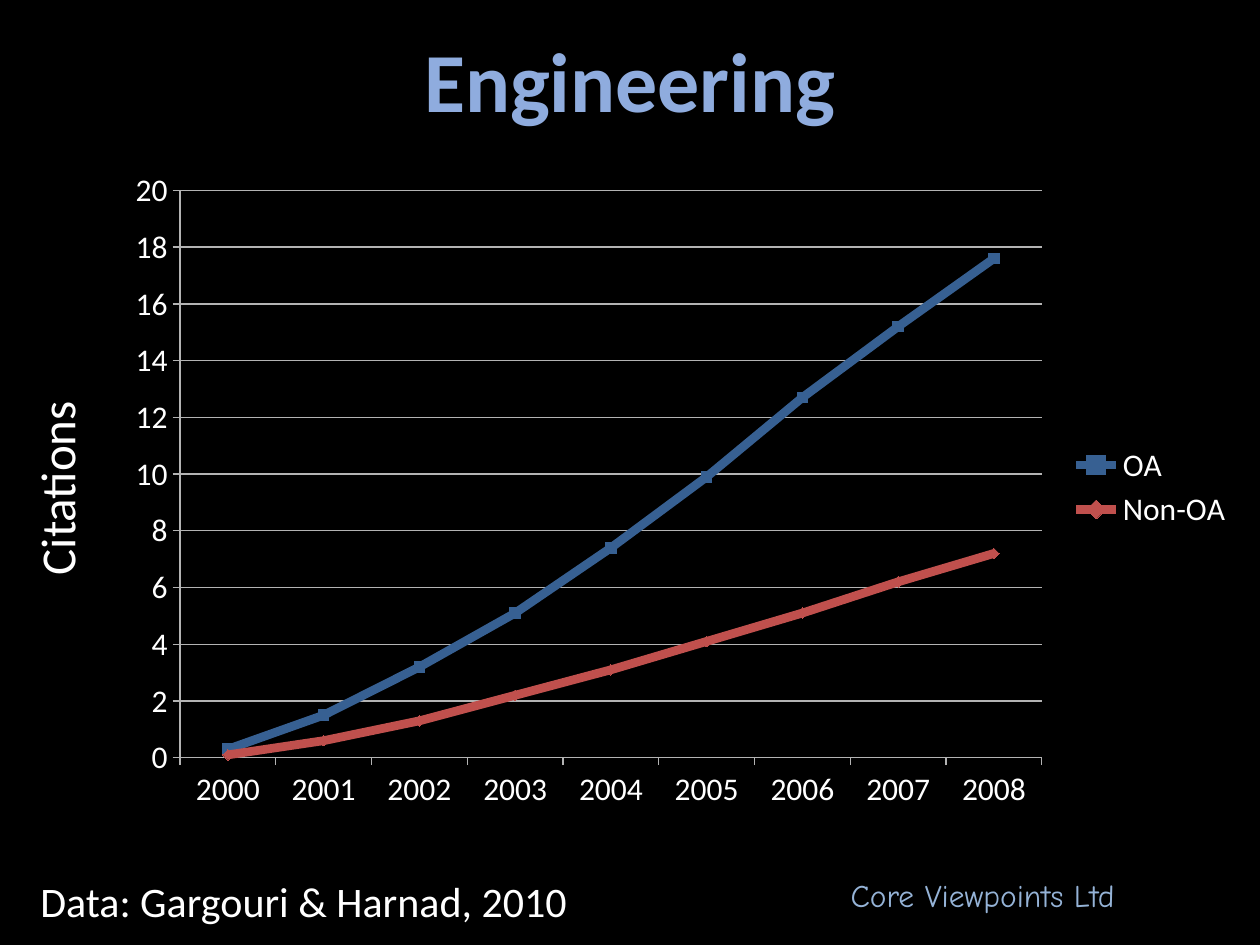
from lxml import etree
from pptx import Presentation
from pptx import util as u
from pptx.chart import data as chart_data
from pptx.dml.color import RGBColor
from pptx.enum import chart as ch, text as tx
from pptx.oxml import ns

# Content
YEARS = [str(year) for year in range(2000, 2009)]
SERIES = [
    ("OA", [0.3, 1.5, 3.2, 5.1, 7.4, 9.9, 12.7, 15.2, 17.6], "oa", "SQUARE"),
    ("Non-OA", [0.1, 0.6, 1.3, 2.2, 3.1, 4.1, 5.1, 6.2, 7.2], "non_oa", "DIAMOND"),
]
# words, place (left, top, width, height), style, alignment, anchor, vert
LABELS = [
    ("Engineering", (36, 0, 648, 90), "title", "CENTER", "MIDDLE", None),
    ("Data: Gargouri & Harnad, 2010", (16, 497, 344, 36), "source", "LEFT", "TOP", None),
    ("Core Viewpoints Ltd", (479, 497, 221, 29), "credit", "LEFT", "TOP", None),
    ("Citations", (11.5, 166.5, 48, 225), "axis", "CENTER", "TOP", "vert270"),
]
CHART_PLACE = (64, 90, 648, 377)
PLOT_LAYOUT = {"x": 0.06, "y": 0.05, "w": 0.76, "h": 0.86}

THEME = {
    "back": "000000", "text": "FFFFFF", "grid": "B3B3B3",
    "oa": "376092", "non_oa": "C0504D",
    "font": "Calibri", "chart_size": 18, "line": 5, "marker": 6,
    # font, size, colour, bold
    "title": ("Calibri", 48, "8FACDE", True),
    "source": ("Calibri", 24, "FFFFFF", False),
    "credit": ("Comic Neue", 18, "95B3D7", False),
    "axis": ("Calibri", 28, "FFFFFF", False),
}


def colour(name):
    return RGBColor.from_string(THEME.get(name, name))


def points(place):
    return [u.Pt(length) for length in place]


def style_font(font, name, size, shade, bold=False):
    font.name, font.size, font.bold = name, u.Pt(size), bold
    font.color.rgb = colour(shade)


def add_label(page, words, place, style, align, anchor, vert):
    frame = page.shapes.add_textbox(*points(place)).text_frame
    frame.word_wrap = True
    frame.vertical_anchor = getattr(tx.MSO_ANCHOR, anchor)
    if vert:
        frame._txBody.bodyPr.set("vert", vert)
    frame.text = words
    para = frame.paragraphs[0]
    para.alignment = getattr(tx.PP_ALIGN, align)
    style_font(para.runs[0].font, *THEME[style])


def set_plot_layout(chart):
    area = chart._chartSpace.chart.plotArea
    for old in area.findall(ns.qn("c:layout")):
        area.remove(old)
    layout = etree.Element(ns.qn("c:layout"))
    manual = etree.SubElement(layout, ns.qn("c:manualLayout"))
    settings = {"layoutTarget": "inner", "xMode": "edge", "yMode": "edge", **PLOT_LAYOUT}
    for tag, value in settings.items():
        etree.SubElement(manual, ns.qn("c:" + tag)).set("val", str(value))
    area.insert(0, layout)


def add_citation_chart(page):
    data = chart_data.CategoryChartData()
    data.categories = YEARS
    for name, values, *_ in SERIES:
        data.add_series(name, values)
    chart = page.shapes.add_chart(
        ch.XL_CHART_TYPE.LINE_MARKERS, *points(CHART_PLACE), data).chart
    style_font(chart.font, THEME["font"], THEME["chart_size"], "text")
    chart.has_title = False
    chart.has_legend = True
    chart.legend.position = ch.XL_LEGEND_POSITION.RIGHT
    chart.legend.include_in_layout = False
    set_plot_layout(chart)

    # Axes and grid
    scale = chart.value_axis
    scale.minimum_scale, scale.maximum_scale, scale.major_unit = 0, 20, 2
    scale.has_major_gridlines = True
    scale.tick_labels.number_format = "General"
    scale.tick_labels.number_format_is_linked = False
    for axis in (scale, chart.category_axis):
        axis.major_tick_mark = ch.XL_TICK_MARK.OUTSIDE
    for part in (scale, chart.category_axis, scale.major_gridlines):
        part.format.line.color.rgb = colour("grid")
        part.format.line.width = u.Pt(0.75)

    # Lines and markers
    plot = chart.plots[0]
    plot.vary_by_categories = False
    for series, (_, _, shade, marker) in zip(plot.series, SERIES):
        series.smooth = False
        series.format.line.color.rgb = colour(shade)
        series.format.line.width = u.Pt(THEME["line"])
        series.marker.style = getattr(ch.XL_MARKER_STYLE, marker)
        series.marker.size = THEME["marker"]
        series.marker.format.fill.solid()
        series.marker.format.fill.fore_color.rgb = colour(shade)
        series.marker.format.line.color.rgb = colour(shade)


def main():
    deck = Presentation()
    deck.slide_width, deck.slide_height = u.Pt(720), u.Pt(540)
    page = deck.slides.add_slide(deck.slide_layouts[6])
    page.background.fill.solid()
    page.background.fill.fore_color.rgb = colour("back")
    add_citation_chart(page)
    for label in LABELS:
        add_label(page, *label)
    deck.save("out.pptx")


if __name__ == "__main__":
    main()
